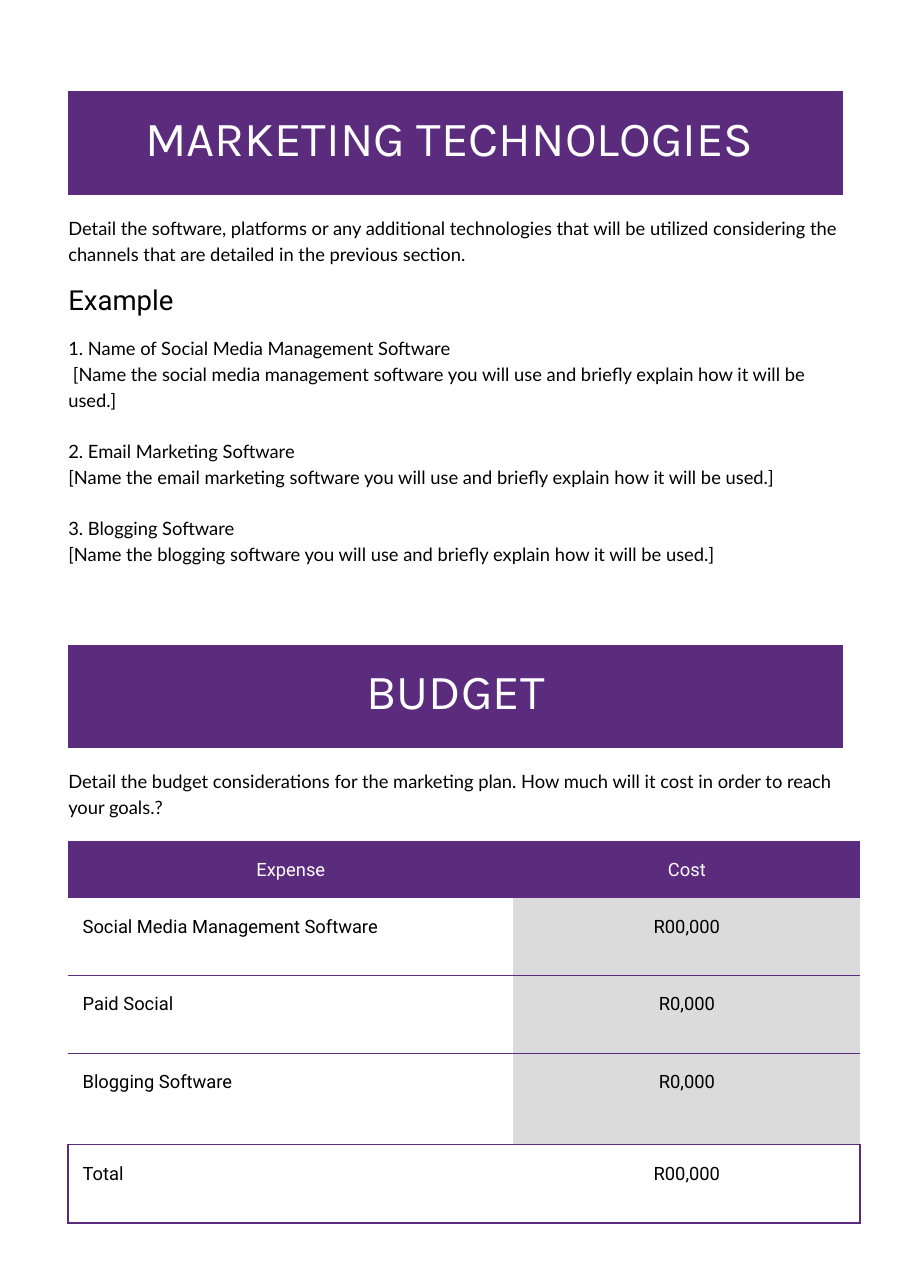
"""Build the marketing technologies and budget page of a marketing plan."""
from dataclasses import dataclass

from lxml import etree
from pptx import Presentation
from pptx.dml.color import RGBColor
from pptx.enum.text import MSO_ANCHOR, MSO_AUTO_SIZE, PP_ALIGN
from pptx.oxml.ns import qn
from pptx.util import Inches, Pt

LEFT, CENTER = PP_ALIGN.LEFT, PP_ALIGN.CENTER
TOP = MSO_ANCHOR.TOP
NO_AUTOFIT = MSO_AUTO_SIZE.NONE

TECHNOLOGY_TITLE = "MARKETING TECHNOLOGIES "
TECHNOLOGY_INTRO = (
    "Detail the software, platforms or any additional technologies that will be "
    "utilized considering the channels that are detailed in the previous section."
)
EXAMPLE_HEADING = "Example"
EXAMPLES = [
    ("1. Name of Social Media Management Software",
     " [Name the social media management software you will use and briefly explain how it will be used.]"),
    ("2. Email Marketing Software",
     "[Name the email marketing software you will use and briefly explain how it will be used.]"),
    ("3. Blogging Software",
     "[Name the blogging software you will use and briefly explain how it will be used.]"),
]
BUDGET_TITLE = "BUDGET"
BUDGET_INTRO = (
    "Detail the budget considerations for the marketing plan. "
    "How much will it cost in order to reach your goals.?"
)
EXPENSES = [
    ("Expense", "Cost"),
    ("Social Media Management Software", "R00,000"),
    ("Paid Social", "R0,000"),
    ("Blogging Software", "R0,000"),
    ("Total", "R00,000"),
]

PAGE_WIDTH, PAGE_HEIGHT = 8.26, 11.69
MARGIN, CONTENT_WIDTH = 0.62, 7.03
BANNER_HEIGHT, BANNER_INSET = 0.94, 0.08
BUDGET_TOP, BUDGET_INSET = 7.63, 0.13
COLUMN_WIDTHS = [4.04, 3.15]
ROW_HEIGHTS = [0.52, 0.7, 0.71, 0.83, 0.71]
THIN, THICK = 0.75, 1.5


@dataclass(frozen=True)
class TextStyle:
    """Font, size and colour of a kind of text."""
    font: str
    size: float
    color: str

    @property
    def line_height(self):
        """Return the fixed line height in points."""
        return self.size * 1.4


@dataclass(frozen=True)
class Theme:
    """Colours and text styles of the page."""
    purple: str = "5B2C7D"
    gray: str = "DBDBDB"
    white: str = "FFFFFF"
    banner: TextStyle = TextStyle("Karla", 32, "FFFFFF")
    body: TextStyle = TextStyle("Lato", 12, "000000")
    heading: TextStyle = TextStyle("Roboto", 18, "000000")
    table_head: TextStyle = TextStyle("Roboto", 12, "FFFFFF")
    table_body: TextStyle = TextStyle("Roboto", 12, "000000")


THEME = Theme()


def write_paragraph(para, text, style, align=LEFT, space_before=0):
    """Write one styled run into a paragraph."""
    para.alignment = align
    para.line_spacing = Pt(style.line_height)
    para.space_before = Pt(space_before)
    para.space_after = Pt(0)
    span = para.add_run()
    span.text = text
    span.font.name = style.font
    span.font.size = Pt(style.size)
    span.font.color.rgb = RGBColor.from_string(style.color)


def place_box(box, top, height):
    """Position a text shape in the content column and return its frame."""
    box.left, box.top = Inches(MARGIN), Inches(top)
    box.width, box.height = Inches(CONTENT_WIDTH), Inches(height)
    frame = box.text_frame
    frame.word_wrap = True
    frame.auto_size = NO_AUTOFIT
    frame.vertical_anchor = TOP
    frame.margin_left = frame.margin_right = 0
    frame.margin_top = frame.margin_bottom = 0
    return frame


def fill_box(box, top, height, text, style):
    """Place a text shape and write its only paragraph."""
    write_paragraph(place_box(box, top, height).paragraphs[0], text, style)


def fill_examples(box):
    """Write the example list without bullets or indents."""
    frame = place_box(box, 3.03, 2.28)
    for number, example in enumerate(EXAMPLES):
        gap = THEME.body.line_height if number else 0
        for line, text in enumerate(example):
            para = frame.add_paragraph() if number or line else frame.paragraphs[0]
            write_paragraph(para, text, THEME.body, space_before=0 if line else gap)
            properties = para._p.get_or_add_pPr()
            properties.set("marL", "0")
            properties.set("indent", "0")
            etree.SubElement(properties, qn("a:buNone"))


def add_grid(page, top, widths, heights):
    """Add a plain table with the given column widths and row heights."""
    table = page.shapes.add_table(
        len(heights), len(widths), Inches(MARGIN), Inches(top),
        Inches(sum(widths)), Inches(sum(heights))).table
    table.first_row = table.horz_banding = False
    for column, width in zip(table.columns, widths):
        column.width = Inches(width)
    for row, height in zip(table.rows, heights):
        row.height = Inches(height)
    return table


def set_borders(cell, widths):
    """Draw the given sides of a cell and hide the others."""
    properties = cell._tc.get_or_add_tcPr()
    for position, side in enumerate("LRTB"):
        width = widths.get(side, 0)
        line = etree.Element(qn(f"a:ln{side}"), w=str(Pt(width)))
        if width:
            solid = etree.SubElement(line, qn("a:solidFill"))
            etree.SubElement(solid, qn("a:srgbClr"), val=THEME.purple)
        else:
            etree.SubElement(line, qn("a:noFill"))
        properties.insert(position, line)


def fill_cell(cell, text, style, align, color, inset, borders):
    """Write and format one table cell."""
    cell.margin_left = cell.margin_right = Inches(inset)
    cell.margin_top = cell.margin_bottom = Inches(inset)
    cell.fill.solid()
    cell.fill.fore_color.rgb = RGBColor.from_string(color)
    set_borders(cell, borders)
    write_paragraph(cell.text_frame.paragraphs[0], text, style, align)


def add_banner(page, top, text):
    """Add a section banner as a one-cell table."""
    table = add_grid(page, top, [CONTENT_WIDTH], [BANNER_HEIGHT])
    fill_cell(table.cell(0, 0), text, THEME.banner, CENTER,
              THEME.purple, BANNER_INSET, {})


def border_widths(row, column):
    """Return the visible border widths of a budget cell."""
    if row == 0:
        return {}
    if row < len(EXPENSES) - 1:
        return {"T": THIN if row > 1 else 0, "B": THIN}
    return {"T": THIN, "B": THICK, "R" if column else "L": THICK}


def cell_color(row, column):
    """Return the fill colour of a budget cell."""
    if row == 0:
        return THEME.purple
    return THEME.gray if column and row < len(EXPENSES) - 1 else THEME.white


def add_budget(page):
    """Add the budget table."""
    table = add_grid(page, BUDGET_TOP, COLUMN_WIDTHS, ROW_HEIGHTS)
    for row, values in enumerate(EXPENSES):
        for column, text in enumerate(values):
            style = THEME.table_body if row else THEME.table_head
            align = LEFT if row and not column else CENTER
            fill_cell(table.cell(row, column), text, style, align,
                      cell_color(row, column), BUDGET_INSET,
                      border_widths(row, column))


def main():
    """Build and save the deck."""
    deck = Presentation()
    deck.slide_width, deck.slide_height = Inches(PAGE_WIDTH), Inches(PAGE_HEIGHT)
    page = deck.slides.add_slide(deck.slide_layouts[1])
    add_banner(page, 0.83, TECHNOLOGY_TITLE)
    for top, height, text in [(1.94, 0.45, TECHNOLOGY_INTRO), (6.96, 0.68, BUDGET_INTRO)]:
        fill_box(page.shapes.add_textbox(0, 0, 0, 0), top, height, text, THEME.body)
    fill_box(page.shapes.title, 2.52, 0.35, EXAMPLE_HEADING, THEME.heading)
    fill_examples(page.placeholders[1])
    add_banner(page, 5.85, BUDGET_TITLE)
    add_budget(page)
    deck.save("out.pptx")


if __name__ == "__main__":
    main()
